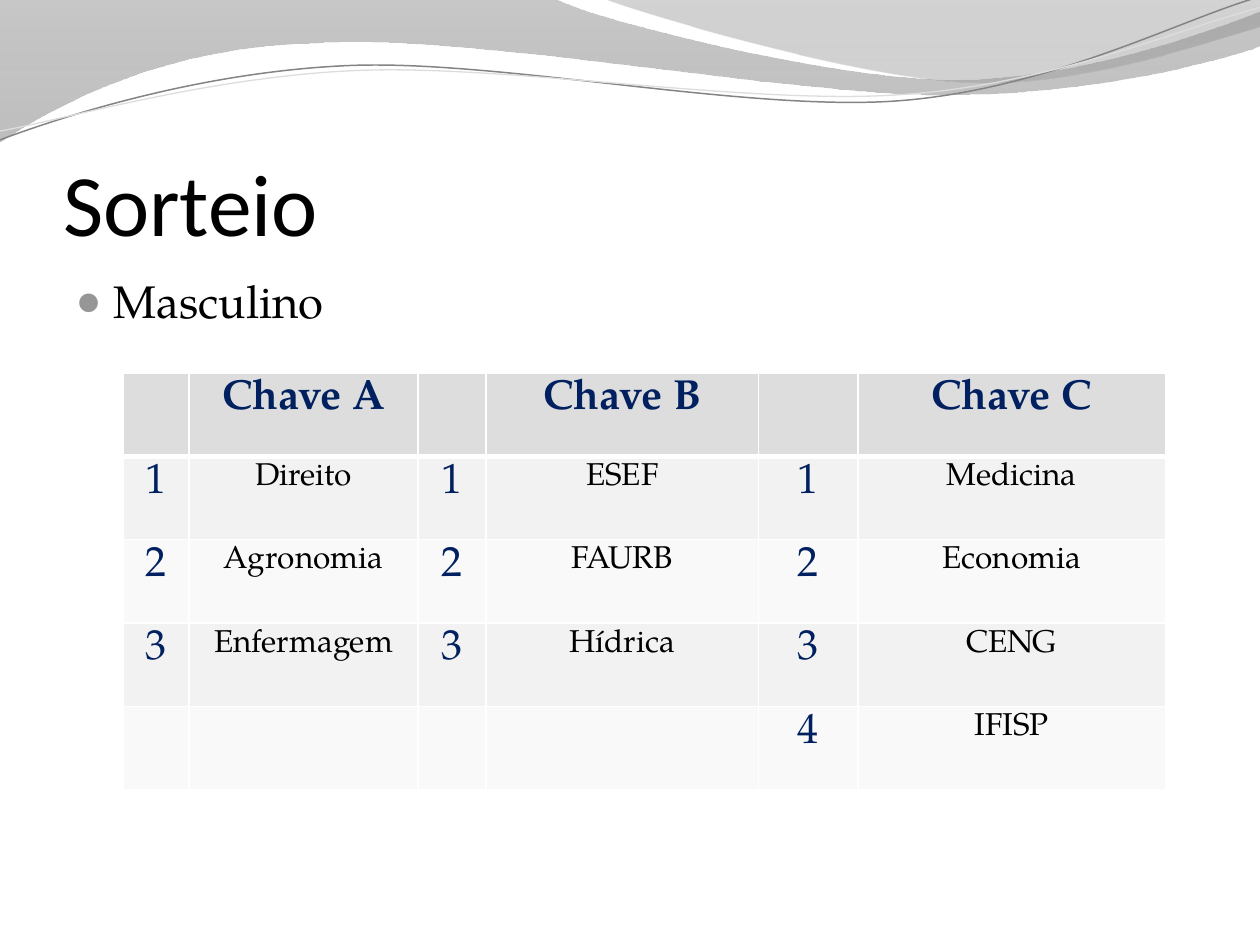
import math

from lxml import etree
from pptx import Presentation
from pptx.dml.color import RGBColor
from pptx.enum import text
from pptx.oxml import ns
from pptx.util import Inches, Pt

COLORS = {
    "black": "000000", "white": "FFFFFF", "navy": "002060", "bullet": "969696",
    "header": "DDDDDD", "odd": "F2F2F2", "even": "F9F9F9",
    "wave_top": "848484", "wave_bottom": "888888",
    "veil_top": "6F6F6F", "veil_bottom": "9D9D9D",
    "dark_line": "848484", "light_line": "DDDDDD",
}
SERIF = "TeX Gyre Pagella"
STRAND_TILT = -2.7

# A two-number segment is a straight line, a six-number one a Bézier curve.
BANDS = [
    {"start": (0, 0),
     "segments": [(4.4, -0.01), (4.76, 0.17, 6.64, 0.63, 7.58, 0.63),
                  (8.53, 0.63, 9.58, 0.26, 10, 0.09), (10.01, 0.36),
                  (9.83, 0.44, 8.7, 0.76, 7.46, 0.75),
                  (6.22, 0.75, 3.82, 0.28, 2.57, 0.34),
                  (1.29, 0.36, 0.46, 0.83, -0.01, 1.13), (0, 0)],
     "stops": [(0, "wave_top", 45), (1, "wave_bottom", 55)]},
    {"start": (4.79, -0.01),
     "segments": [(5.09, 0.11, 6.82, 0.62, 7.69, 0.65),
                  (8.56, 0.69, 9.61, 0.32, 10, 0.21), (10, 0), (4.79, -0.01)],
     "stops": [(0, "veil_top", 30), (0.8, "veil_bottom", 45)]},
]
STRANDS = [
    {"start": (0, 1.11), "center": (4.99, 0.58), "color": "dark_line", "width": 0.85,
     "segments": [(0.48, 0.93, 1.58, 0.57, 2.77, 0.52),
                  (3.95, 0.47, 5.93, 0.89, 7.13, 0.8),
                  (8.33, 0.71, 9.38, 0.15, 9.98, -0.02)]},
    {"start": (0, 1.04), "center": (5, 0.59), "color": "light_line", "width": 0.75,
     "segments": [(0.47, 0.96, 1.64, 0.61, 2.83, 0.56),
                  (4.03, 0.51, 5.97, 0.84, 7.17, 0.75),
                  (8.36, 0.67, 9.41, 0.21, 10, 0.06)]},
]

GROUPS = {
    "Chave A": ["Direito", "Agronomia", "Enfermagem"],
    "Chave B": ["ESEF", "FAURB", "Hídrica"],
    "Chave C": ["Medicina", "Economia", "CENG", "IFISP"],
}
COLUMN_WIDTHS = [0.52, 1.82, 0.54, 2.16, 0.79, 2.44]
HEADER_BORDERS = {"a:lnL": 1, "a:lnR": 1, "a:lnT": 1, "a:lnB": 3}


def rgb(name):
    return RGBColor.from_string(COLORS[name])


def set_font(font, color, **values):
    for name, value in values.items():
        setattr(font, name, value)
    font.color.rgb = rgb(color)


def place(shape, box):
    for name, value in zip(("left", "top", "width", "height"), box):
        setattr(shape, name, Inches(value))


def rotate(point, center, degrees):
    angle = math.radians(degrees)
    x, y = point[0] - center[0], point[1] - center[1]
    return (center[0] + x * math.cos(angle) - y * math.sin(angle),
            center[1] + x * math.sin(angle) + y * math.cos(angle))


def add_outline(slide, origin, part, close, tilt=0):
    """Draw through every point, then join each curve's three lines into one Bézier."""
    points = [part["start"]]
    for segment in part["segments"]:
        points += zip(segment[::2], segment[1::2])
    if tilt:
        points = [rotate(point, part["center"], -tilt) for point in points]
    points = [(Inches(origin[0] + x), Inches(origin[1] + y)) for x, y in points]
    builder = slide.shapes.build_freeform(*points[0], scale=1.0)
    builder.add_line_segments(points[1:], close=close)
    shape = builder.convert_to_shape()
    shape.shadow.inherit = False
    shape.rotation = tilt
    lines = list(shape.element.iter(ns.qn("a:lnTo")))
    for segment in part["segments"]:
        count = len(segment) // 2
        joined, lines = lines[:count], lines[count:]
        if count == 3:
            curve = etree.Element(ns.qn("a:cubicBezTo"))
            joined[0].addprevious(curve)
            for line in joined:
                curve.append(line[0])
                line.getparent().remove(line)
    return shape


def fill_gradient(shape, stops):
    """Fill from top to bottom with (position, color, opacity %) stops."""
    shape.fill.gradient()
    shape.fill.gradient_angle = 270
    for stop, (position, color, _) in zip(shape.fill.gradient_stops, stops):
        stop.position = position
        stop.color.rgb = rgb(color)
    color_elements = list(shape.element.spPr.iter(ns.qn("a:srgbClr")))
    for element, (_, _, opacity) in zip(color_elements, stops):
        etree.SubElement(element, ns.qn("a:alpha"), val=str(opacity * 1000))


def add_waves(slide, origin):
    for band in BANDS:
        shape = add_outline(slide, origin, band, close=True)
        fill_gradient(shape, band["stops"])
        shape.line.fill.background()
    for strand in STRANDS:
        shape = add_outline(slide, origin, strand, close=False, tilt=STRAND_TILT)
        shape.fill.background()
        shape.line.color.rgb = rgb(strand["color"])
        shape.line.width = Pt(strand["width"])


def bring_to_front(shape):
    shape.element.getparent().append(shape.element)


def fill_title(title, box):
    place(title, box)
    bring_to_front(title)
    frame = title.text_frame
    frame.text = "Sorteio"
    frame_format = {
        "margin_left": 0, "margin_top": Inches(0.05), "margin_right": 0, "margin_bottom": 0,
        "vertical_anchor": text.MSO_ANCHOR.BOTTOM, "auto_size": text.MSO_AUTO_SIZE.NONE,
    }
    for name, value in frame_format.items():
        setattr(frame, name, value)
    paragraph = frame.paragraphs[0]
    paragraph.alignment = text.PP_ALIGN.LEFT
    set_font(paragraph.runs[0].font, "black", name="Calibri", size=Pt(50))


def add_bullet(paragraph):
    properties = paragraph._p.get_or_add_pPr()
    properties.set("marL", str(Inches(0.3)))
    properties.set("indent", str(Inches(-0.3)))
    color = etree.SubElement(properties, ns.qn("a:buClr"))
    etree.SubElement(color, ns.qn("a:srgbClr"), val=COLORS["bullet"])
    etree.SubElement(properties, ns.qn("a:buSzPct"), val="95000")
    etree.SubElement(properties, ns.qn("a:buChar"), char="●")


def fill_body(body, box):
    place(body, box)
    bring_to_front(body)
    frame = body.text_frame
    frame.text = "Masculino"
    frame.auto_size = text.MSO_AUTO_SIZE.NONE
    paragraph = frame.paragraphs[0]
    add_bullet(paragraph)
    set_font(paragraph.runs[0].font, "black", name=SERIF, size=Pt(26))


def write_cell(cell, content, color, size, bold=False):
    paragraph = cell.text_frame.paragraphs[0]
    paragraph.alignment = text.PP_ALIGN.CENTER
    run = paragraph.add_run()
    run.text = content
    set_font(run.font, color, name=SERIF, size=Pt(size), bold=bold)


def add_borders(cell, widths):
    properties = cell._tc.get_or_add_tcPr()
    for index, (tag, width) in enumerate(widths.items()):
        border = etree.Element(ns.qn(tag), w=str(Pt(width)))
        fill = etree.SubElement(border, ns.qn("a:solidFill"))
        etree.SubElement(fill, ns.qn("a:srgbClr"), val=COLORS["white"])
        properties.insert(index, border)


def add_draw_table(slide, box):
    """Each group takes a narrow number column and a wide team column."""
    row_count = 1 + max(len(teams) for teams in GROUPS.values())
    table = slide.shapes.add_table(row_count, 2 * len(GROUPS),
                                   *(Inches(value) for value in box)).table
    for column, width in zip(table.columns, COLUMN_WIDTHS):
        column.width = Inches(width)
    for index, row in enumerate(table.rows):
        fill = "header" if index == 0 else ("even", "odd")[index % 2]
        for cell in row.cells:
            cell.fill.solid()
            cell.fill.fore_color.rgb = rgb(fill)
            if index == 0:
                add_borders(cell, HEADER_BORDERS)
    for group, (heading, teams) in enumerate(GROUPS.items()):
        write_cell(table.cell(0, 2 * group + 1), heading, "navy", 24, bold=True)
        for number, team in enumerate(teams, start=1):
            write_cell(table.cell(number, 2 * group), str(number), "navy", 24)
            write_cell(table.cell(number, 2 * group + 1), team, "black", 18)


def main():
    presentation = Presentation()
    presentation.slide_width, presentation.slide_height = Inches(10), Inches(7.5)
    slide = presentation.slides.add_slide(presentation.slide_layouts[1])
    title, body = slide.shapes.title, slide.placeholders[1]
    add_waves(slide, (0, 0))
    fill_title(title, (0.5, 0.77, 9, 1.25))
    fill_body(body, (0.5, 2.12, 9, 4.8))
    add_draw_table(slide, (0.98, 2.96, 8.27, 3.31))
    presentation.save("out.pptx")


if __name__ == "__main__":
    main()
